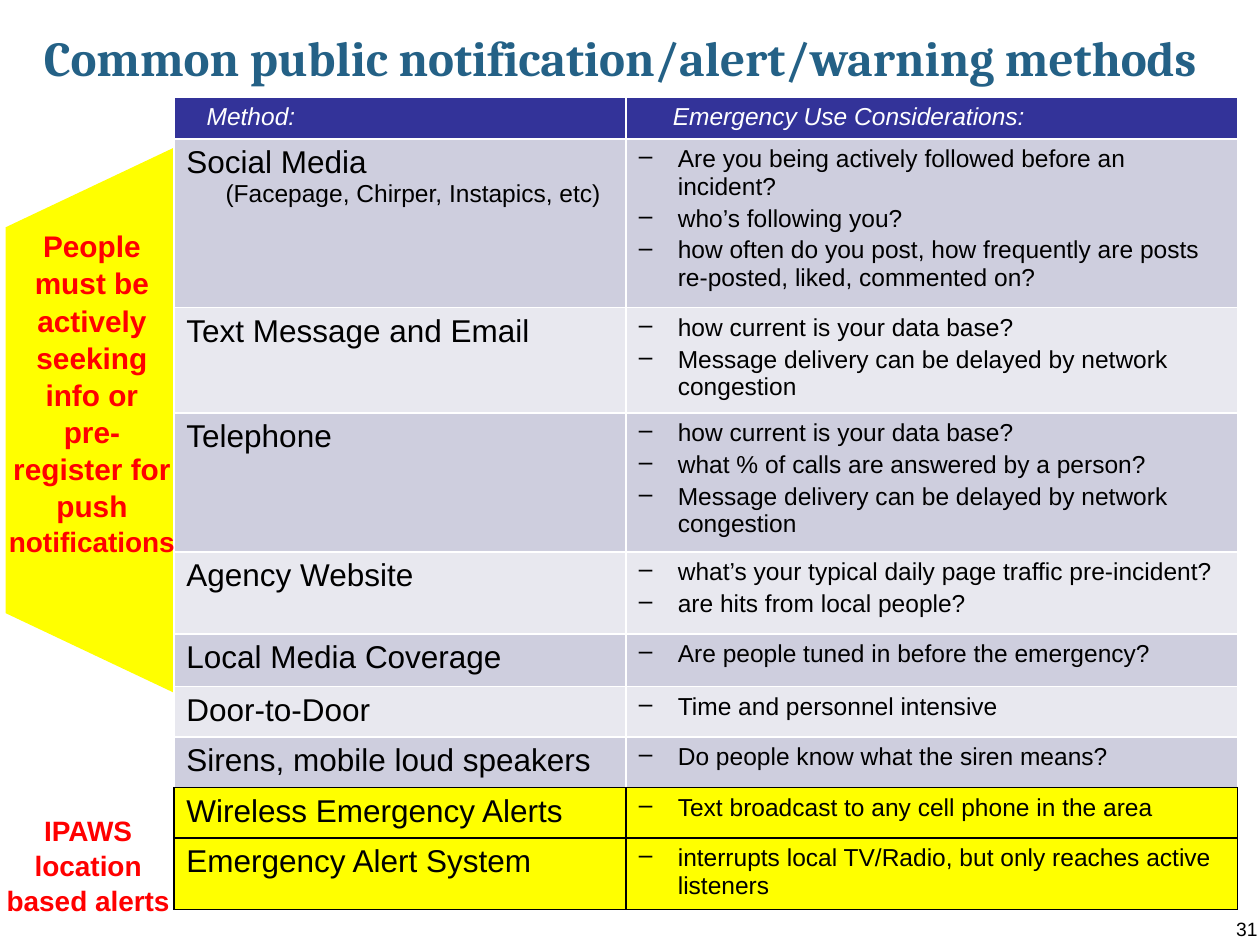
from lxml import etree
from pptx import Presentation
from pptx.dml.color import RGBColor
from pptx.enum.shapes import MSO_SHAPE
from pptx.enum.text import MSO_ANCHOR, PP_ALIGN
from pptx.oxml.ns import qn
from pptx.util import Inches, Pt


def paint(target, color):
    """Give a fill or a font a solid colour from a hex string."""
    if hasattr(target, "solid"):
        target.solid()
        target.fore_color.rgb = RGBColor.from_string(color)
    else:
        target.color.rgb = RGBColor.from_string(color)


def write(frame, lines, size, color, font="Arial", bold=False, italic=False,
          align=PP_ALIGN.LEFT, space=1.0, gap=0, indent=0, bullet=False):
    """Fill a text frame with evenly styled paragraphs."""
    frame.word_wrap = True
    for i, line in enumerate(lines):
        para = frame.paragraphs[0] if i == 0 else frame.add_paragraph()
        para.text = line
        para.alignment = align
        para.line_spacing = space
        if i:
            para.space_before = Pt(gap)
        props = para._p.get_or_add_pPr()
        if indent:
            props.set("marL", str(Inches(indent)))
        if bullet:
            props.set("indent", str(-Inches(indent)))
            etree.SubElement(props, qn("a:buChar")).set("char", "–")
        para.font.name = font
        para.font.size = Pt(size)
        para.font.bold = bold
        para.font.italic = italic
        paint(para.font, color)


BLACK, WHITE, RED, YELLOW = "000000", "FFFFFF", "FF0000", "FFFF00"
DARK, LIGHT = "CECEDE", "E8E8EF"

deck = Presentation()
deck.slide_width, deck.slide_height = Inches(10), Inches(7.5)
slide = deck.slides.add_slide(deck.slide_layouts[6])
shapes = slide.shapes

# Yellow flag beside the table
flag = shapes.add_shape(MSO_SHAPE.TRAPEZOID, Inches(-1.45), Inches(2.67),
                        Inches(4.32), Inches(1.33))
flag.rotation = 270
flag.adjustments[0] = 0.473
flag.shadow.inherit = False
paint(flag.fill, YELLOW)
flag.line.fill.background()

# Title
title = shapes.add_textbox(Inches(0.25), Inches(-0.17), Inches(9.61), Inches(1.25))
title.text_frame.vertical_anchor = MSO_ANCHOR.MIDDLE
write(title.text_frame, ["Common public notification/alert/warning methods"],
      28, "246186", font="Cambria", bold=True)

# Table rows: height, method, considerations
rows = [
    (1.27, "Social Media",
     ["Are you being actively followed before an incident?",
      "who’s following you?",
      "how often do you post, how frequently are posts re-posted, liked, commented on?"]),
    (0.8, "Text Message and Email",
     ["how current is your data base?",
      "Message delivery can be delayed by network congestion"]),
    (1.05, "Telephone",
     ["how current is your data base?",
      "what % of calls are answered by a person?",
      "Message delivery can be delayed by network congestion"]),
    (0.65, "Agency Website",
     ["what’s your typical daily page traffic pre-incident?",
      "are hits from local people?"]),
    (0.42, "Local Media Coverage", ["Are people tuned in before the emergency?"]),
    (0.4, "Door-to-Door", ["Time and personnel intensive"]),
    (0.4, "Sirens, mobile loud speakers", ["Do people know what the siren means?"]),
    (0.4, "Wireless Emergency Alerts", ["Text broadcast to any cell phone in the area"]),
    (0.54, "Emergency Alert System",
     ["interrupts local TV/Radio, but only reaches active listeners"]),
]
heights = [0.33] + [row[0] for row in rows]
grid = shapes.add_table(len(heights), 2, Inches(1.38), Inches(0.77),
                        Inches(8.44), Inches(sum(heights))).table
grid.first_row = grid.horz_banding = False
for col, width in zip(grid.columns, (3.59, 4.85)):
    col.width = Inches(width)
for row, height in zip(grid.rows, heights):
    row.height = Inches(height)

# Header and body text
heads = [("Method:", 0.16), ("Emergency Use Considerations:", 0.27)]
for col, (text, indent) in enumerate(heads):
    write(grid.cell(0, col).text_frame, [text], 14, WHITE, italic=True, indent=indent)
for i, (height, method, notes) in enumerate(rows, 1):
    write(grid.cell(i, 0).text_frame, [method], 18, BLACK)
    write(grid.cell(i, 1).text_frame, notes, 14, BLACK,
          gap=2.5, indent=0.31, bullet=True)

# Examples under the first method
sites = grid.cell(1, 0).text_frame.add_paragraph()
sites.text = "(Facepage, Chirper, Instapics, etc)"
sites._p.get_or_add_pPr().set("marL", str(Inches(0.31)))
sites.font.name, sites.font.size = "Arial", Pt(14)
paint(sites.font, BLACK)

# Fills and borders; the last two rows are marked in yellow and black
marked = len(heights) - 2
for i in range(len(heights)):
    fill = "333399" if i == 0 else YELLOW if i >= marked else DARK if i % 2 else LIGHT
    for cell in grid.rows[i].cells:
        paint(cell.fill, fill)
        props = cell._tc.get_or_add_tcPr()
        for n, side in enumerate("LRTB"):
            black = i >= marked or (i == marked - 1 and side == "B")
            edge = etree.Element(qn("a:ln" + side), w=str(Pt(1)))
            solid = etree.SubElement(edge, qn("a:solidFill"))
            etree.SubElement(solid, qn("a:srgbClr")).set("val", BLACK if black else WHITE)
            props.insert(n, edge)

# Slide number
page = shapes.add_textbox(Inches(7.75), Inches(7.25), Inches(2.33), Inches(0.25))
write(page.text_frame, ["31"], 11, BLACK, align=PP_ALIGN.RIGHT, space=0.93)

# Red side notes
alert = shapes.add_textbox(Inches(-0.07), Inches(6.4), Inches(1.54), Inches(0.91))
write(alert.text_frame, ["IPAWS location based alerts"], 16, RED,
      bold=True, align=PP_ALIGN.CENTER, space=1.04)
push = shapes.add_textbox(Inches(-0.04), Inches(1.75), Inches(1.54), Inches(2.66))
write(push.text_frame,
      ["People must be actively seeking info or", "pre- register for push "],
      17, RED, bold=True, align=PP_ALIGN.CENTER, space=1.04)
last = push.text_frame.paragraphs[1].add_run()
last.text = "notifications"
last.font.size = Pt(16)

deck.save("out.pptx")
